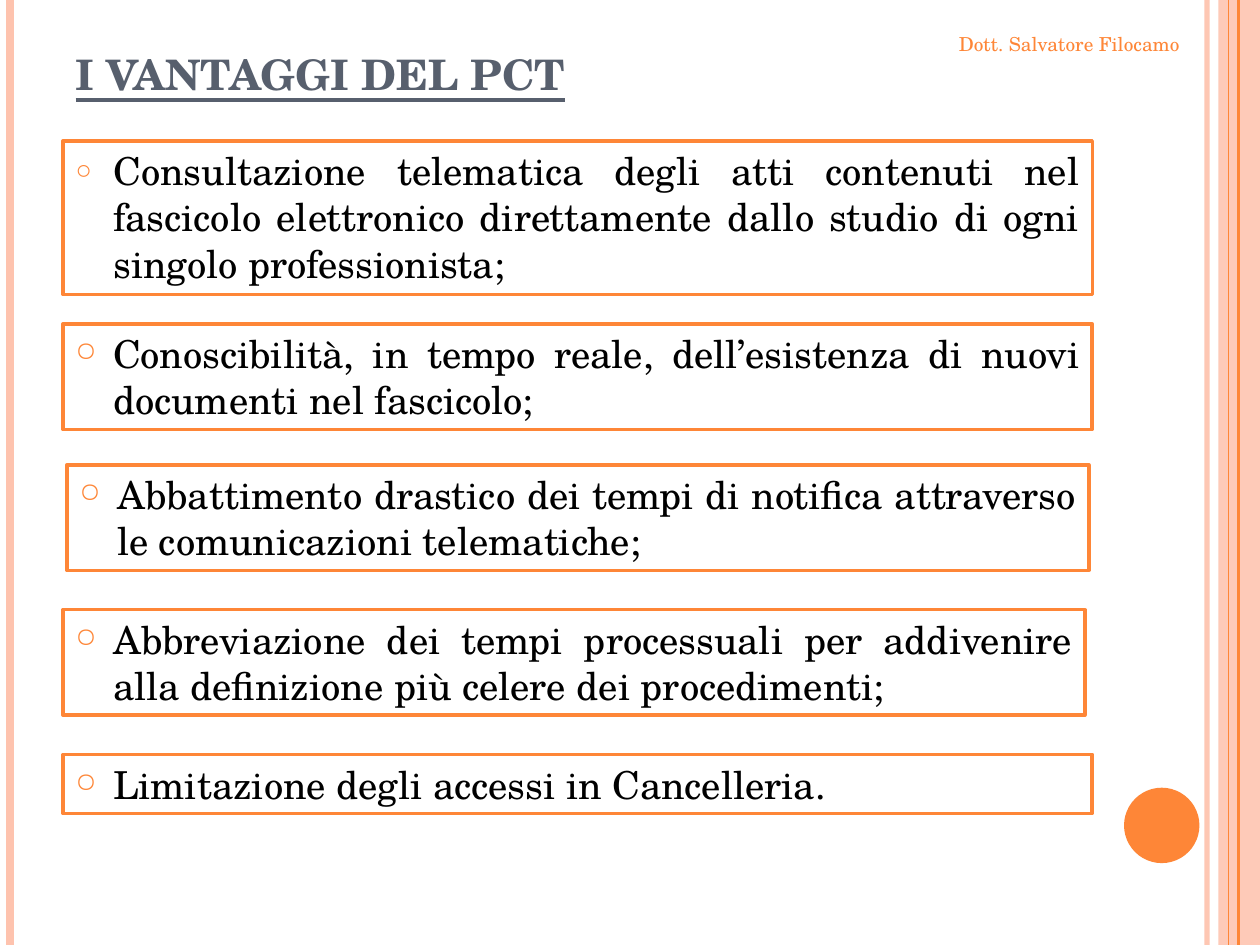
from lxml import etree
from pptx import Presentation
from pptx import util as u
from pptx.dml.color import RGBColor
from pptx.enum import shapes, text
from pptx.oxml import ns

ORANGE = RGBColor(0xFE, 0x86, 0x37)
PEACH = RGBColor(0xFE, 0xC3, 0xAE)
SLATE = RGBColor(0x57, 0x5F, 0x6D)
BLACK = RGBColor(0, 0, 0)
WHITE = RGBColor(0xFF, 0xFF, 0xFF)
FONT = "TeX Gyre Schola"
HEIGHT = u.Cm(19.05)


def add_run(paragraph, words, size, color):
    run = paragraph.add_run()
    run.text = words
    run.font.name = FONT
    run.font.size = u.Pt(size)
    run.font.color.rgb = color
    return run


def set_opacity(shape, percent):
    color = shape._element.spPr.find(".//" + ns.qn("a:srgbClr"))
    etree.SubElement(color, ns.qn("a:alpha"), val=str(percent * 1000))


presentation = Presentation()
presentation.slide_width = u.Cm(25.4)
presentation.slide_height = HEIGHT
slide = presentation.slides.add_slide(presentation.slide_layouts[1])

# Side stripes, band and circle
band = slide.shapes.add_shape(
    shapes.MSO_SHAPE.RECTANGLE, u.Cm(24.56), 0, u.Cm(0.84), HEIGHT)
circle = slide.shapes.add_shape(
    shapes.MSO_SHAPE.OVAL, u.Cm(22.66), u.Cm(15.88), u.Cm(1.52), u.Cm(1.52))
for shape, color in ((band, PEACH), (circle, ORANGE)):
    shape.shadow.inherit = False
    shape.fill.solid()
    shape.fill.fore_color.rgb = color
    shape.line.fill.background()
set_opacity(band, 87)

stripes = [
    (24.33, PEACH, 3, 93),
    (0.2, PEACH, 4.5, 100),
    (24.97, ORANGE, 1.5, 100),
    (24.77, ORANGE, 0.75, 100),
]
for x, color, width, opacity in stripes:
    stripe = slide.shapes.add_connector(
        shapes.MSO_CONNECTOR.STRAIGHT, u.Cm(x), 0, u.Cm(x), HEIGHT)
    stripe.line.color.rgb = color
    stripe.line.width = u.Pt(width)
    etree.SubElement(stripe._element.spPr, ns.qn("a:effectLst"))
    if opacity < 100:
        set_opacity(stripe, opacity)

# Title
title = slide.shapes.title
title.left, title.top = u.Cm(1.27), u.Cm(0.76)
title.width, title.height = u.Cm(20.75), u.Cm(1.4)
title.text_frame.auto_size = text.MSO_AUTO_SIZE.NONE
title.text_frame.vertical_anchor = text.MSO_ANCHOR.BOTTOM
paragraph = title.text_frame.paragraphs[0]
paragraph.alignment = text.PP_ALIGN.LEFT
run = add_run(paragraph, "i vantaggi del pct", 30, SLATE)
run.font.bold = True
run.font.underline = True
run.font._element.set("cap", "small")

# Framed advantages: the first one is the body placeholder
advantages = [
    (1.27, 2.84, 20.75, 3.1,
     "Consultazione telematica degli atti contenuti nel fascicolo elettronico "
     "direttamente dallo studio di ogni singolo professionista;"),
    (1.27, 6.53, 20.75, 2.13,
     "Conoscibilità, in tempo reale, dell’esistenza di nuovi documenti nel fascicolo;"),
    (1.35, 9.37, 20.6, 2.13,
     "Abbattimento drastico dei tempi di notifica attraverso le comunicazioni telematiche;"),
    (1.27, 12.29, 20.6, 2.13,
     "Abbreviazione dei tempi processuali per addivenire alla definizione "
     "più celere dei procedimenti;"),
    (1.27, 15.21, 20.75, 1.19, "Limitazione degli accessi in Cancelleria."),
]
for index, (left, top, width, height, words) in enumerate(advantages):
    place = [u.Cm(length) for length in (left, top, width, height)]
    if index == 0:
        box = slide.placeholders[1]
        box.left, box.top, box.width, box.height = place
    else:
        box = slide.shapes.add_textbox(*place)
    box.fill.solid()
    box.fill.fore_color.rgb = WHITE
    box.line.color.rgb = ORANGE
    box.line.width = u.Pt(2)
    frame = box.text_frame
    frame.word_wrap = True
    frame.auto_size = text.MSO_AUTO_SIZE.NONE
    frame.vertical_anchor = text.MSO_ANCHOR.TOP
    paragraph = frame.paragraphs[0]
    paragraph.alignment = text.PP_ALIGN.JUSTIFY
    paragraph.space_before = u.Pt(6)
    properties = paragraph._element.get_or_add_pPr()
    properties.set("marL", str(u.Cm(0.76)))
    properties.set("indent", str(u.Cm(-0.76)))
    bullet_color = etree.SubElement(properties, ns.qn("a:buClr"))
    etree.SubElement(bullet_color, ns.qn("a:srgbClr"), val=str(ORANGE))
    etree.SubElement(properties, ns.qn("a:buSzPct"), val="70000")
    etree.SubElement(properties, ns.qn("a:buChar"), char="○")
    add_run(paragraph, words, 22, BLACK)

# Author
author = slide.shapes.add_textbox(u.Cm(19.08), u.Cm(0.53), u.Cm(5), u.Cm(0.74))
author.text_frame.word_wrap = False
add_run(author.text_frame.paragraphs[0], "Dott. Salvatore Filocamo", 11, ORANGE)

presentation.save("out.pptx")
